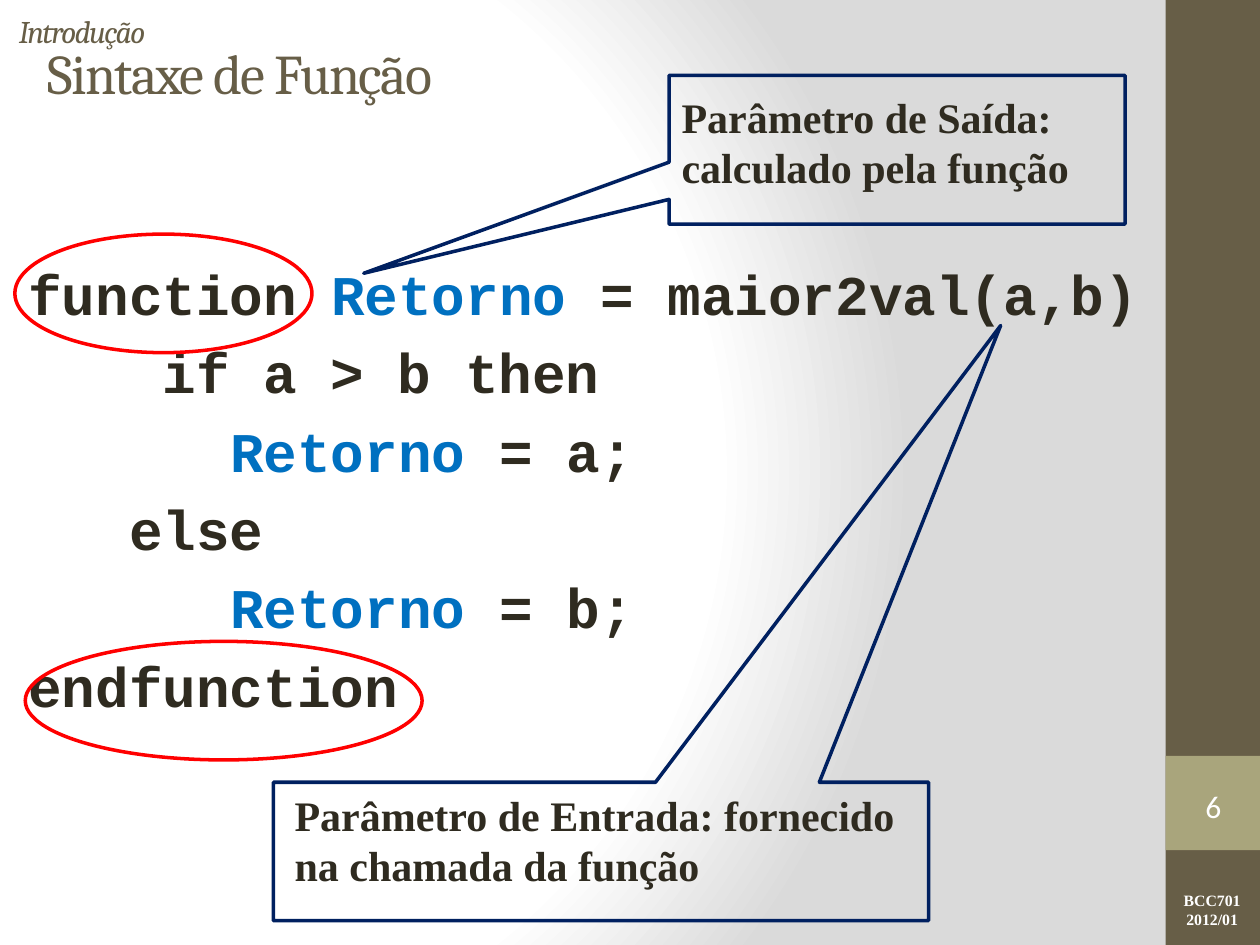
"""Build the slide explaining the syntax of a function."""
import pptx
import pptx.dml.color
import pptx.enum.shapes
import pptx.enum.text
import pptx.oxml
import pptx.oxml.ns
import pptx.util

Cm = pptx.util.Cm
Pt = pptx.util.Pt
RGBColor = pptx.dml.color.RGBColor
MSO_SHAPE = pptx.enum.shapes.MSO_SHAPE
MSO_ANCHOR = pptx.enum.text.MSO_ANCHOR
PP_ALIGN = pptx.enum.text.PP_ALIGN

BROWN = RGBColor(0x67, 0x5E, 0x47)
OLIVE = RGBColor(0xA9, 0xA5, 0x7C)
DARK = RGBColor(0x2F, 0x2B, 0x20)
NAVY = RGBColor(0x00, 0x20, 0x60)
BLUE = RGBColor(0x00, 0x70, 0xC0)
RED = RGBColor(0xFF, 0x00, 0x00)
WHITE = RGBColor(0xFF, 0xFF, 0xFF)

TITLE_FONT = {"name": "Cambria", "size": Pt(32)}
SECTION_FONT = {"name": "Cambria", "size": Pt(18), "italic": True}
CODE_FONT = {"name": "Courier New", "size": Pt(32), "bold": True}
NOTE_FONT = {"name": "Times New Roman", "size": Pt(24), "bold": True}
FOOTER_FONT = {"name": "Times New Roman", "size": Pt(9), "bold": True}
NUMBER_FONT = {"name": "Calibri", "size": Pt(18)}

RETURN_NAME = "Retorno"
CODE_LINES = [
    "function Retorno = maior2val(a,b)",
    "    if a > b then",
    "      Retorno = a;",
    "   else",
    "      Retorno = b;",
    "endfunction",
]

BACKGROUND = (
    '<a:gradFill xmlns:a="http://schemas.openxmlformats.org/drawingml/2006/main"'
    ' rotWithShape="1"><a:gsLst>'
    '<a:gs pos="0"><a:srgbClr val="FFFFFF"/></a:gs>'
    '<a:gs pos="75000"><a:srgbClr val="FFFFFF"/></a:gs>'
    '<a:gs pos="100000"><a:srgbClr val="DADADA"/></a:gs></a:gsLst>'
    '<a:path path="circle">'
    '<a:fillToRect l="20000" t="50000" r="100000" b="50000"/></a:path></a:gradFill>'
)


def set_attributes(target, values):
    """Set each attribute named in values on the target."""
    for name, value in values.items():
        setattr(target, name, value)


def set_background(slide):
    """Give the slide a radial gradient background."""
    slide.background.fill.solid()
    properties = slide.element.find(".//" + pptx.oxml.ns.qn("p:bgPr"))
    properties.replace(properties[0], pptx.oxml.parse_xml(BACKGROUND))


def add_block(slide, box, color):
    """Add a filled rectangle without an outline."""
    shape = slide.shapes.add_shape(MSO_SHAPE.RECTANGLE, *map(Cm, box))
    shape.shadow.inherit = False
    shape.fill.solid()
    shape.fill.fore_color.rgb = color
    shape.line.fill.background()


def add_outline(slide, kind, box, color, adjustments=()):
    """Add an unfilled shape with a coloured outline."""
    shape = slide.shapes.add_shape(kind, *map(Cm, box))
    shape.shadow.inherit = False
    shape.fill.background()
    shape.line.color.rgb = color
    shape.line.width = Pt(2)
    for index, value in enumerate(adjustments):
        shape.adjustments[index] = value


def add_run(paragraph, text, font, color, spacing=None):
    """Append a formatted run to the paragraph."""
    run = paragraph.add_run()
    run.text = text
    set_attributes(run.font, font)
    run.font.color.rgb = color
    if spacing is not None:
        run.font._element.set("spc", str(spacing))


def add_text_frame(slide, box, frame_format):
    """Add a wrapping text box and return its text frame."""
    frame = slide.shapes.add_textbox(*map(Cm, box)).text_frame
    frame.word_wrap = True
    set_attributes(frame, frame_format)
    return frame


def add_text(slide, box, lines, font, color, paragraph_format=None,
             frame_format=None, spacing=None):
    """Add a text box with one paragraph per line."""
    frame = add_text_frame(slide, box, frame_format or {})
    for index, line in enumerate(lines):
        paragraph = frame.add_paragraph() if index else frame.paragraphs[0]
        set_attributes(paragraph, paragraph_format or {})
        add_run(paragraph, line, font, color, spacing)


def add_code(slide, box):
    """Add the code listing with the return variable highlighted."""
    frame = add_text_frame(slide, box, {"margin_left": Cm(0.57)})
    for index, line in enumerate(CODE_LINES):
        paragraph = frame.add_paragraph() if index else frame.paragraphs[0]
        if index:
            paragraph.space_before = Pt(6.4)
        before, name, after = line.partition(RETURN_NAME)
        for text, color in ((before, DARK), (name, BLUE), (after, DARK)):
            if text:
                add_run(paragraph, text, CODE_FONT, color)


def main():
    """Create the presentation and save it."""
    presentation = pptx.Presentation()
    presentation.slide_width, presentation.slide_height = Cm(25.4), Cm(19.05)
    slide = presentation.slides.add_slide(presentation.slide_layouts[6])
    middle = {"vertical_anchor": MSO_ANCHOR.MIDDLE}
    centered = {"alignment": PP_ALIGN.CENTER}
    no_margins = dict.fromkeys(
        ("margin_left", "margin_top", "margin_right", "margin_bottom"), 0)
    note_format = {"line_spacing": Pt(28.5)}
    callout = MSO_SHAPE.RECTANGULAR_CALLOUT

    set_background(slide)
    add_block(slide, (23.5, 0, 1.9, 19.05), BROWN)
    add_block(slide, (23.5, 15.24, 1.9, 1.9), OLIVE)
    add_text(slide, (23.52, 17.83, 1.83, 1.02), ["BCC701", "2012/01"],
             FOOTER_FONT, WHITE, centered)
    add_outline(slide, callout, (13.49, 1.52, 9.19, 3), NAVY, (-1.17, 0.83))
    add_text(slide, (0.71, 0.76, 22.71, 1.37), ["Sintaxe de Função"],
             TITLE_FONT, BROWN, frame_format=middle, spacing=-100)
    add_code(slide, (0, 5.1, 23.29, 11.5))
    add_text(slide, (23.7, 15.7, 1.52, 1.09), ["6"], NUMBER_FONT, WHITE,
             centered, {**middle, **no_margins})
    add_text(slide, (0.13, 0.2, 21.13, 0.86), ["Introdução"],
             SECTION_FONT, BROWN, frame_format=middle, spacing=-100)
    add_outline(slide, MSO_SHAPE.OVAL, (0.3, 4.72, 5.99, 2.39), RED)
    add_outline(slide, MSO_SHAPE.OVAL, (0.51, 12.93, 8, 2.39), RED)
    add_outline(slide, callout, (5.51, 15.77, 13.21, 2.79), NAVY, (0.61, -3.8))
    add_text(slide, (13.49, 1.73, 8.99, 2.31),
             ["Parâmetro de Saída: calculado pela função"],
             NOTE_FONT, DARK, note_format)
    add_text(slide, (5.69, 15.8, 12.8, 2.31),
             ["Parâmetro de Entrada: fornecido na chamada da função"],
             NOTE_FONT, DARK, note_format)
    presentation.save("out.pptx")


if __name__ == "__main__":
    main()
